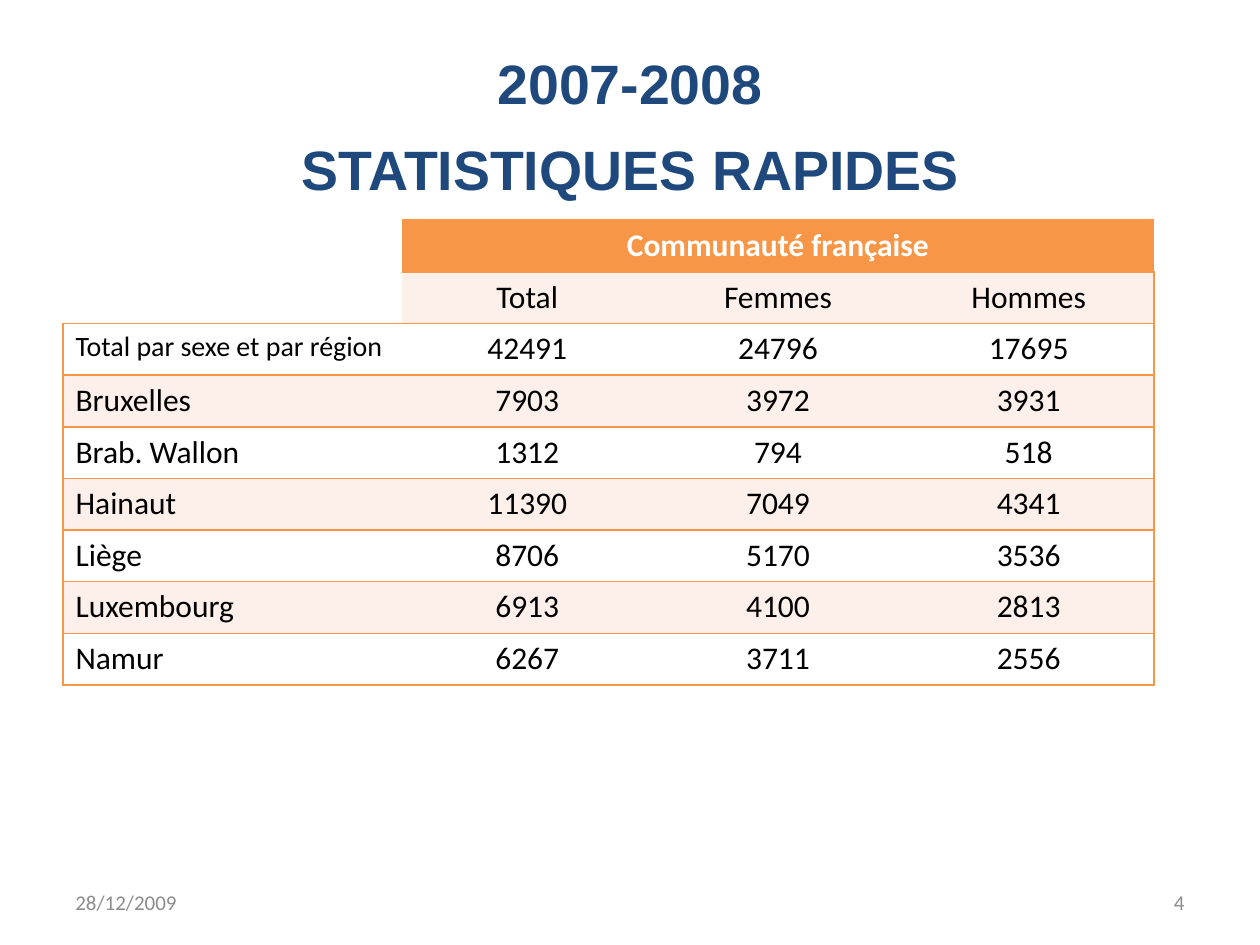
from lxml import etree
from pptx import Presentation
from pptx.dml.color import RGBColor
from pptx.enum.text import MSO_ANCHOR, PP_ALIGN
from pptx.oxml.ns import qn
from pptx.util import Inches, Pt

LEFT, CENTER, RIGHT = PP_ALIGN.LEFT, PP_ALIGN.CENTER, PP_ALIGN.RIGHT
TOP, MIDDLE = MSO_ANCHOR.TOP, MSO_ANCHOR.MIDDLE

NAVY = RGBColor(0x1F, 0x49, 0x7D)
ORANGE = RGBColor(0xF7, 0x96, 0x46)
PALE = RGBColor(0xFD, 0xEF, 0xE9)
WHITE = RGBColor(0xFF, 0xFF, 0xFF)
BLACK = RGBColor(0x00, 0x00, 0x00)
GRAY = RGBColor(0x8C, 0x8C, 0x8C)

SLIDE_WIDTH, SLIDE_HEIGHT = Inches(10), Inches(7.5)
MARGIN = 0.05
FOOTER_TOP, FOOTER_WIDTH, FOOTER_HEIGHT = 0.93, 0.23, 0.05
LABEL_WIDTH, VALUE_WIDTH, ROW_HEIGHT = Inches(2.69), Inches(1.99), Inches(0.41)
HEADER_ROWS = 2

HEADINGS = ("", "Total", "Femmes", "Hommes")
REGIONS = (
    ("Total par sexe et par région", 42491, 24796, 17695),
    ("Bruxelles", 7903, 3972, 3931),
    ("Brab. Wallon", 1312, 794, 518),
    ("Hainaut", 11390, 7049, 4341),
    ("Liège", 8706, 5170, 3536),
    ("Luxembourg", 6913, 4100, 2813),
    ("Namur", 6267, 3711, 2556),
)


def write_text(frame, text, size=18, font="Calibri", color=BLACK, bold=False,
               align=LEFT, anchor=TOP, small_caps=False, line_spacing=None):
    frame.word_wrap = True
    frame.vertical_anchor = anchor
    paragraph = frame.paragraphs[0]
    paragraph.text = text
    paragraph.alignment = align
    paragraph.line_spacing = line_spacing
    for run in paragraph.runs:
        run.font.size = Pt(size)
        run.font.name = font
        run.font.bold = bold
        run.font.color.rgb = color
        if small_caps:
            run.font._element.set("cap", "small")


def add_text_box(slide, left, top, width, height, text, **text_format):
    box = slide.shapes.add_textbox(
        int(SLIDE_WIDTH * left), int(SLIDE_HEIGHT * top),
        int(SLIDE_WIDTH * width), int(SLIDE_HEIGHT * height))
    write_text(box.text_frame, text, **text_format)


def set_borders(cell, sides):
    properties = cell._tc.get_or_add_tcPr()
    for side in "LRTB":
        line = etree.SubElement(properties, qn(f"a:ln{side}"), w=str(Pt(1)))
        if side in sides:
            fill = etree.SubElement(line, qn("a:solidFill"))
            etree.SubElement(fill, qn("a:srgbClr"), val=str(ORANGE))
        else:
            etree.SubElement(line, qn("a:noFill"))


def border_sides(row, column, last_column):
    if column == 0 and row < HEADER_ROWS:
        return "B" if row == HEADER_ROWS - 1 else ""
    left = "L" if column == 0 else ""
    right = "R" if column == last_column else ""
    return left + right + "TB"


def style_cell(cell, row, column, last_column):
    set_borders(cell, border_sides(row, column, last_column))
    if column == 0 and row < HEADER_ROWS:
        cell.fill.background()
        return
    cell.fill.solid()
    band = PALE if row % 2 else WHITE
    cell.fill.fore_color.rgb = ORANGE if row == 0 else band


def add_statistics_table(slide, left, top):
    rows = (("", "Communauté française", "", ""), HEADINGS) + REGIONS
    last_column = len(HEADINGS) - 1
    table = slide.shapes.add_table(
        len(rows), len(HEADINGS), int(SLIDE_WIDTH * left), int(SLIDE_HEIGHT * top),
        LABEL_WIDTH + VALUE_WIDTH * last_column, ROW_HEIGHT * len(rows)).table
    table.first_row = table.horz_banding = False
    for column in range(len(HEADINGS)):
        table.columns[column].width = VALUE_WIDTH if column else LABEL_WIDTH
    for row, values in enumerate(rows):
        table.rows[row].height = ROW_HEIGHT
        for column, value in enumerate(values):
            cell = table.cell(row, column)
            style_cell(cell, row, column, last_column)
            if value == "":
                continue
            write_text(cell.text_frame, str(value),
                       size=16 if (row, column) == (HEADER_ROWS, 0) else 18,
                       color=BLACK if row else WHITE, bold=row == 0,
                       align=CENTER if column else LEFT)
    table.cell(1, 1).vertical_anchor = MIDDLE
    table.cell(0, 0).merge(table.cell(HEADER_ROWS - 1, 0))
    table.cell(0, 1).merge(table.cell(0, last_column))


def main():
    presentation = Presentation()
    presentation.slide_width, presentation.slide_height = SLIDE_WIDTH, SLIDE_HEIGHT
    slide = presentation.slides.add_slide(presentation.slide_layouts[6])
    add_text_box(slide, MARGIN, 0.04, 1 - 2 * MARGIN, 0.17,
                 "2007-2008\vstatistiques rapides", size=39.6, font="Arial",
                 color=NAVY, bold=True, align=CENTER, anchor=MIDDLE,
                 small_caps=True, line_spacing=1.04)
    add_statistics_table(slide, MARGIN, 0.233)
    footers = ((MARGIN, "28/12/2009", LEFT), (1 - MARGIN - FOOTER_WIDTH, "4", RIGHT))
    for left, text, align in footers:
        add_text_box(slide, left, FOOTER_TOP, FOOTER_WIDTH, FOOTER_HEIGHT, text,
                     size=12, color=GRAY, align=align, anchor=MIDDLE)
    presentation.save("out.pptx")


if __name__ == "__main__":
    main()
